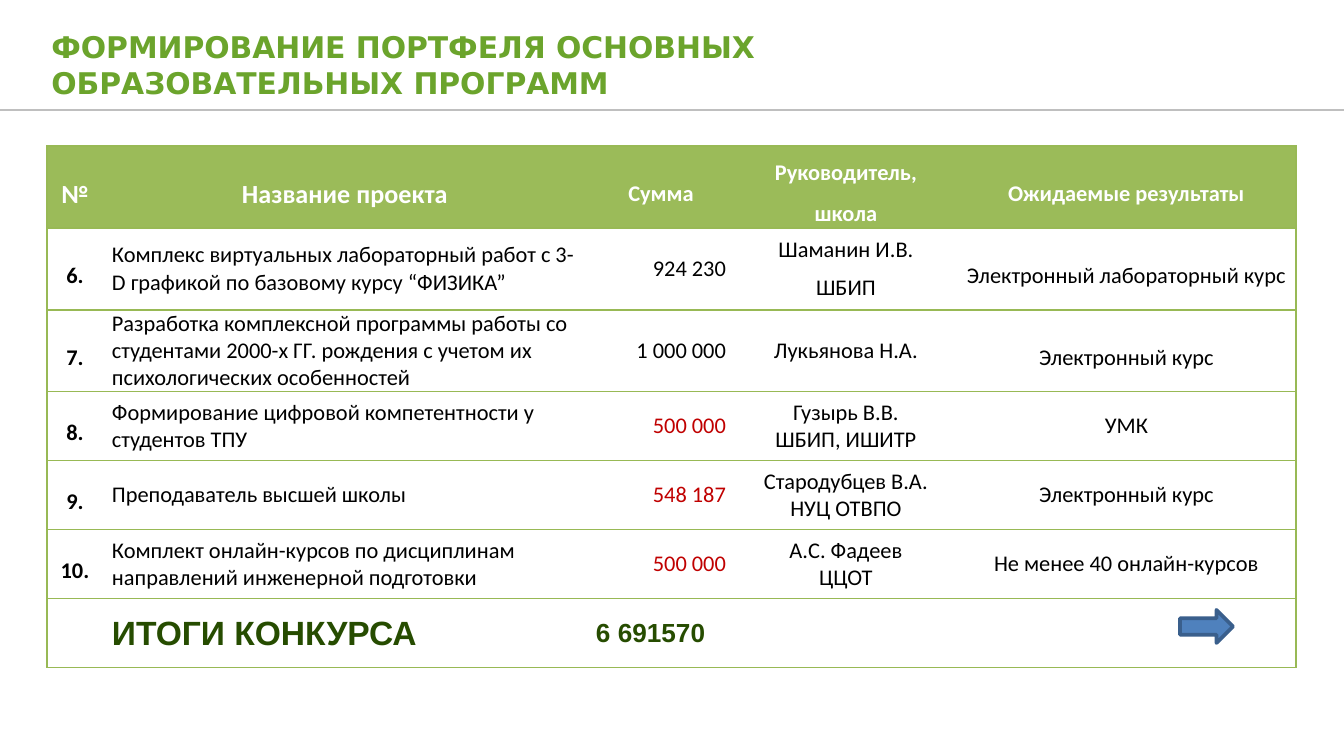
from dataclasses import dataclass

from lxml import etree
from pptx import Presentation
from pptx.dml.color import RGBColor
from pptx.enum.shapes import MSO_CONNECTOR, MSO_SHAPE
from pptx.enum.text import MSO_ANCHOR, MSO_AUTO_SIZE, PP_ALIGN
from pptx.oxml.ns import qn
from pptx.util import Emu, Pt

LEFT, CENTER, RIGHT = PP_ALIGN.LEFT, PP_ALIGN.CENTER, PP_ALIGN.RIGHT
MIDDLE = MSO_ANCHOR.MIDDLE
NO_AUTOFIT = MSO_AUTO_SIZE.NONE
STRAIGHT = MSO_CONNECTOR.STRAIGHT
RIGHT_ARROW = MSO_SHAPE.RIGHT_ARROW
TITLE_ONLY = 5
EMU_PER_PIXEL = 914400 / 134.4
SLIDE_WIDTH, SLIDE_HEIGHT = 1344, 756


@dataclass(frozen=True)
class Theme:
    title_font: str = "DejaVu Sans"
    body_font: str = "Calibri"
    total_font: str = "Arial"
    title_color: str = "6BA42C"
    rule: str = "BFBFBF"
    header_fill: str = "9BBB59"
    border: str = "98B955"
    white: str = "FFFFFF"
    text: str = "000000"
    reduced: str = "C00000"
    total: str = "264C00"
    arrow_fill: str = "4F81BD"
    arrow_line: str = "3A5F8C"
    title_size: int = 16
    body_size: int = 12
    large_size: int = 14
    total_size: int = 18
    border_width: float = 0.75


THEME = Theme()
COLUMN_WIDTHS = [56, 484, 148, 222, 339]
ROW_HEIGHTS = [81, 82, 82, 69, 69, 69, 69]
ALIGNMENTS = [CENTER, LEFT, RIGHT, CENTER, CENTER]
HEADERS = ["№", "Название проекта", "Сумма", "Руководитель, школа", "Ожидаемые результаты"]
PROJECTS = [
    ["6.", "Комплекс виртуальных лабораторный работ с 3-D графикой по базовому курсу “ФИЗИКА”",
     "924 230", "Шаманин И.В.\nШБИП", "Электронный лабораторный курс"],
    ["7.", "Разработка комплексной программы работы со студентами 2000-х ГГ. рождения "
     "с учетом их психологических особенностей",
     "1 000 000", "Лукьянова Н.А.", "Электронный курс"],
    ["8.", "Формирование цифровой компетентности у студентов ТПУ",
     "500 000", "Гузырь В.В.\nШБИП, ИШИТР", "УМК"],
    ["9.", "Преподаватель высшей школы",
     "548 187", "Стародубцев В.А.\nНУЦ ОТВПО", "Электронный курс"],
    ["10.", "Комплект онлайн-курсов по дисциплинам направлений инженерной подготовки",
     "500 000", "А.С. Фадеев\nЦЦОТ", "Не менее 40 онлайн-курсов"],
]
SPACED_PROJECTS = 2


def px(value):
    return Emu(round(value * EMU_PER_PIXEL))


def rgb(color):
    return RGBColor.from_string(color)


def style_paragraph(paragraph, font, size, color, bold=False, align=LEFT, line_spacing=1.0, after=0):
    paragraph.alignment = align
    paragraph.line_spacing = line_spacing
    paragraph.space_before = Pt(0)
    paragraph.space_after = Pt(after)
    paragraph.font.name = font
    paragraph.font.size = Pt(size)
    paragraph.font.bold = bold
    paragraph.font.color.rgb = rgb(color)


def write_cell(cell, text, **style):
    cell.text_frame.text = text
    for paragraph in cell.text_frame.paragraphs:
        style_paragraph(paragraph, **style)


def set_border(cell, side, color):
    line = etree.SubElement(cell._tc.get_or_add_tcPr(), qn(f"a:ln{side}"))
    if color is None:
        etree.SubElement(line, qn("a:noFill"))
        return
    line.set("w", str(Pt(THEME.border_width)))
    fill = etree.SubElement(line, qn("a:solidFill"))
    etree.SubElement(fill, qn("a:srgbClr"), val=color)


def format_cells(table):
    last_column = len(COLUMN_WIDTHS) - 1
    for row_index, row in enumerate(table.rows):
        for column_index, cell in enumerate(row.cells):
            cell.vertical_anchor = MIDDLE
            cell.margin_left = cell.margin_right = px(9)
            cell.margin_top = cell.margin_bottom = 0
            set_border(cell, "L", THEME.border if column_index == 0 else None)
            set_border(cell, "R", THEME.border if column_index == last_column else None)
            set_border(cell, "T", THEME.border)
            set_border(cell, "B", THEME.border)
            if row_index == 0:
                cell.fill.solid()
                cell.fill.fore_color.rgb = rgb(THEME.header_fill)
            else:
                cell.fill.background()


def add_title(slide, left, top, width, height):
    title = slide.shapes.title
    title.left, title.top, title.width, title.height = map(px, (left, top, width, height))
    frame = title.text_frame
    frame.word_wrap = True
    frame.auto_size = NO_AUTOFIT
    frame.vertical_anchor = MIDDLE
    frame.text = "ФОРМИРОВАНИЕ ПОРТФЕЛЯ ОСНОВНЫХ ОБРАЗОВАТЕЛЬНЫХ ПРОГРАММ"
    style_paragraph(frame.paragraphs[0], THEME.title_font, THEME.title_size, THEME.title_color, bold=True)


def add_rule(slide, left, top, width):
    rule = slide.shapes.add_connector(STRAIGHT, px(left + width), px(top), px(left), px(top))
    rule.line.color.rgb = rgb(THEME.rule)
    rule.line.width = Pt(1)
    etree.SubElement(rule._element.spPr, qn("a:effectLst"))


def add_project_table(slide, left, top):
    frame = slide.shapes.add_table(
        len(ROW_HEIGHTS), len(COLUMN_WIDTHS), px(left), px(top),
        px(sum(COLUMN_WIDTHS)), px(sum(ROW_HEIGHTS)))
    table = frame.table
    table.first_row = table.horz_banding = False
    for column, width in zip(table.columns, COLUMN_WIDTHS):
        column.width = px(width)
    for row, height in zip(table.rows, ROW_HEIGHTS):
        row.height = px(height)
    format_cells(table)

    for index, text in enumerate(HEADERS):
        size = THEME.large_size if index < 2 else THEME.body_size
        write_cell(table.cell(0, index), text, font=THEME.body_font, size=size, color=THEME.white,
                   bold=True, align=CENTER, line_spacing=1.5, after=6)

    for project_index, project in enumerate(PROJECTS):
        spaced = project_index < SPACED_PROJECTS
        for index, text in enumerate(project):
            is_number = index == 0
            is_result = index == len(project) - 1
            is_reduced = index == 2 and not spaced
            write_cell(
                table.cell(project_index + 1, index), text, font=THEME.body_font,
                size=THEME.body_size if not is_number else THEME.body_size,
                color=THEME.reduced if is_reduced else THEME.text,
                bold=is_number, align=ALIGNMENTS[index],
                line_spacing=1.5 if is_number or (is_result and spaced) else 1.0,
                after=6 if is_number or spaced else 0)

    total_row = len(ROW_HEIGHTS) - 1
    totals = [("ИТОГИ КОНКУРСА", THEME.total_size), ("6 691570", THEME.large_size)]
    for index, (text, size) in enumerate(totals, start=1):
        write_cell(table.cell(total_row, index), text, font=THEME.total_font, size=size,
                   color=THEME.total, bold=True)


def add_next_arrow(slide, left, top, width, height):
    arrow = slide.shapes.add_shape(RIGHT_ARROW, *map(px, (left, top, width, height)))
    arrow.shadow.inherit = False
    arrow.fill.solid()
    arrow.fill.fore_color.rgb = rgb(THEME.arrow_fill)
    arrow.line.color.rgb = rgb(THEME.arrow_line)
    arrow.line.width = Pt(2)


def main():
    presentation = Presentation()
    presentation.slide_width = px(SLIDE_WIDTH)
    presentation.slide_height = px(SLIDE_HEIGHT)
    slide = presentation.slides.add_slide(presentation.slide_layouts[TITLE_ONLY])
    add_title(slide, 38, 29, 931, 71)
    add_rule(slide, 0, 110, SLIDE_WIDTH)
    add_project_table(slide, 47, 146)
    add_next_arrow(slide, 1180, 610, 53, 33)
    presentation.save("out.pptx")


if __name__ == "__main__":
    main()
